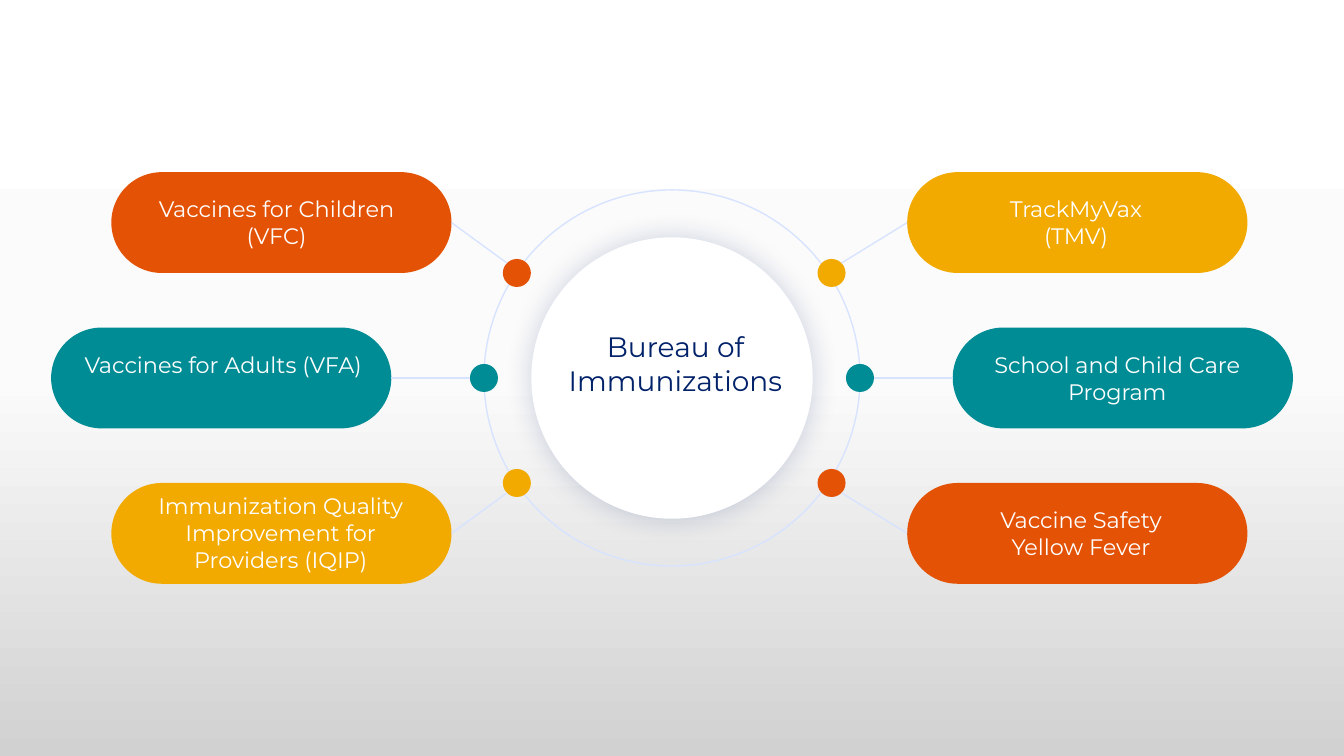
from math import sqrt

from lxml.etree import SubElement
from pptx import Presentation
from pptx.dml.color import RGBColor
from pptx.enum.shapes import MSO_CONNECTOR, MSO_SHAPE
from pptx.enum.text import MSO_ANCHOR, PP_ALIGN
from pptx.oxml.ns import qn
from pptx.util import Pt

ORANGE, TEAL, YELLOW = "E35205", "008C95", "F2A900"
NAVY, PALE_BLUE, WHITE = "012169", "D7E3FF", "FFFFFF"

CENTER_X, CENTER_Y = 480, 270
ROW_PITCH = 111
PILL_WIDTH, PILL_HEIGHT = 243, 72
DOT_RADIUS = 10

# Side (-1 left, 1 right), row (-1, 0, 1), colour, pill left,
# dot offset from the centre (x, y), text left, text inset, lines
PROGRAMS = [
    (-1, -1, ORANGE, 79.5, -110.8, -75, 87.8, 13, ["Vaccines for Children (VFC)"]),
    (-1, 0, TEAL, 36.5, -134.3, 0, 49.7, 13.5, ["Vaccines for Adults (VFA)"]),
    (-1, 1, YELLOW, 79.5, -110.8, 75, 90.7, 3,
     ["Immunization Quality Improvement for Providers (IQIP)"]),
    (1, -1, YELLOW, 648, 114, -75, 658.8, 13, ["TrackMyVax", "(TMV)"]),
    (1, 0, TEAL, 680.5, 134.3, 0, 688.3, 13.5, ["School and Child Care Program"]),
    (1, 1, ORANGE, 648, 114, 75, 662.4, 13, ["Vaccine Safety", "Yellow Fever"]),
]


def color(hex_string):
    return RGBColor.from_string(hex_string)


def format_text(text_frame, lines, size=16, text_color=WHITE, font="Montserrat"):
    text_frame.word_wrap = True
    text_frame.vertical_anchor = MSO_ANCHOR.TOP
    for index, line in enumerate(lines):
        paragraph = text_frame.paragraphs[0] if index == 0 else text_frame.add_paragraph()
        paragraph.alignment = PP_ALIGN.CENTER
        run = paragraph.add_run()
        run.text = line
        run.font.name = font
        run.font.size = Pt(size)
        run.font.color.rgb = color(text_color)


class Diagram:
    def __init__(self, slide, line_color=PALE_BLUE, line_width=1):
        self.slide = slide
        self.line_color = line_color
        self.line_width = line_width

    def background(self, stops):
        fill = self.slide.background.fill
        fill.gradient()
        fill.gradient_angle = 270
        stop_list = next(self.slide.element.iter(qn("a:gsLst")))
        for old_stop in list(stop_list):
            stop_list.remove(old_stop)
        for position, hex_string in stops:
            stop = SubElement(stop_list, qn("a:gs"), pos=str(position * 1000))
            SubElement(stop, qn("a:srgbClr"), val=hex_string)

    def outline(self, line):
        line.color.rgb = color(self.line_color)
        line.width = Pt(self.line_width)

    def shape(self, kind, left, top, width, height, fill=None):
        shape = self.slide.shapes.add_shape(kind, Pt(left), Pt(top), Pt(width), Pt(height))
        shape.shadow.inherit = False
        if fill:
            shape.fill.solid()
            shape.fill.fore_color.rgb = color(fill)
            shape.line.fill.background()
        else:
            shape.fill.background()
            self.outline(shape.line)
        return shape

    def circle(self, x, y, radius, fill=None):
        return self.shape(MSO_SHAPE.OVAL, x - radius, y - radius, 2 * radius, 2 * radius, fill)

    def glow(self, shape, hex_string, blur, opacity):
        effects = shape.element.spPr.find(qn("a:effectLst"))
        shadow = SubElement(effects, qn("a:outerShdw"), blurRad=str(Pt(blur)),
                            dist="0", dir="0", algn="ctr", rotWithShape="0")
        shadow_color = SubElement(shadow, qn("a:srgbClr"), val=hex_string)
        SubElement(shadow_color, qn("a:alpha"), val=str(opacity * 1000))

    def pill(self, left, top, fill):
        shape = self.shape(MSO_SHAPE.ROUNDED_RECTANGLE, left, top, PILL_WIDTH, PILL_HEIGHT, fill)
        shape.adjustments[0] = 0.5

    def link(self, start_x, start_y, end_x, end_y):
        connector = self.slide.shapes.add_connector(
            MSO_CONNECTOR.STRAIGHT, Pt(start_x), Pt(start_y), Pt(end_x), Pt(end_y))
        self.outline(connector.line)
        SubElement(connector.element.spPr, qn("a:effectLst"))

    def text(self, lines, left, top, width, height, **style):
        box = self.slide.shapes.add_textbox(Pt(left), Pt(top), Pt(width), Pt(height))
        format_text(box.text_frame, lines, **style)


def main():
    presentation = Presentation()
    presentation.slide_width, presentation.slide_height = Pt(960), Pt(540)
    slide = presentation.slides.add_slide(presentation.slide_layouts[6])
    diagram = Diagram(slide)
    diagram.background([(0, WHITE), (50, "FBFBFB"), (100, "D1D1D1")])

    # Hub and ring
    hub = diagram.circle(CENTER_X, CENTER_Y, 100.5, WHITE)
    diagram.glow(hub, NAVY, blur=20, opacity=20)
    diagram.circle(CENTER_X, CENTER_Y, 134.3)
    diagram.text(["Bureau of Immunizations"], 391, 231.8, 183, 55.5,
                 size=20, text_color=NAVY)

    # Programs around the hub
    for side, row, fill, pill_left, dot_x, dot_y, text_left, inset, lines in PROGRAMS:
        pill_y = CENTER_Y + row * ROW_PITCH
        pill_top = pill_y - PILL_HEIGHT / 2
        pill_edge = pill_left + (PILL_WIDTH if side < 0 else 0)
        x, y = CENTER_X + dot_x, CENTER_Y + dot_y
        reach = DOT_RADIUS / sqrt(1 + abs(row))
        diagram.circle(x, y, DOT_RADIUS, fill)
        diagram.pill(pill_left, pill_top, fill)
        diagram.link(x + side * reach, y + row * reach, pill_edge, pill_y)
        diagram.text(lines, text_left, pill_top + inset, 219.6, PILL_HEIGHT - 2 * inset)

    presentation.save("out.pptx")


if __name__ == "__main__":
    main()
